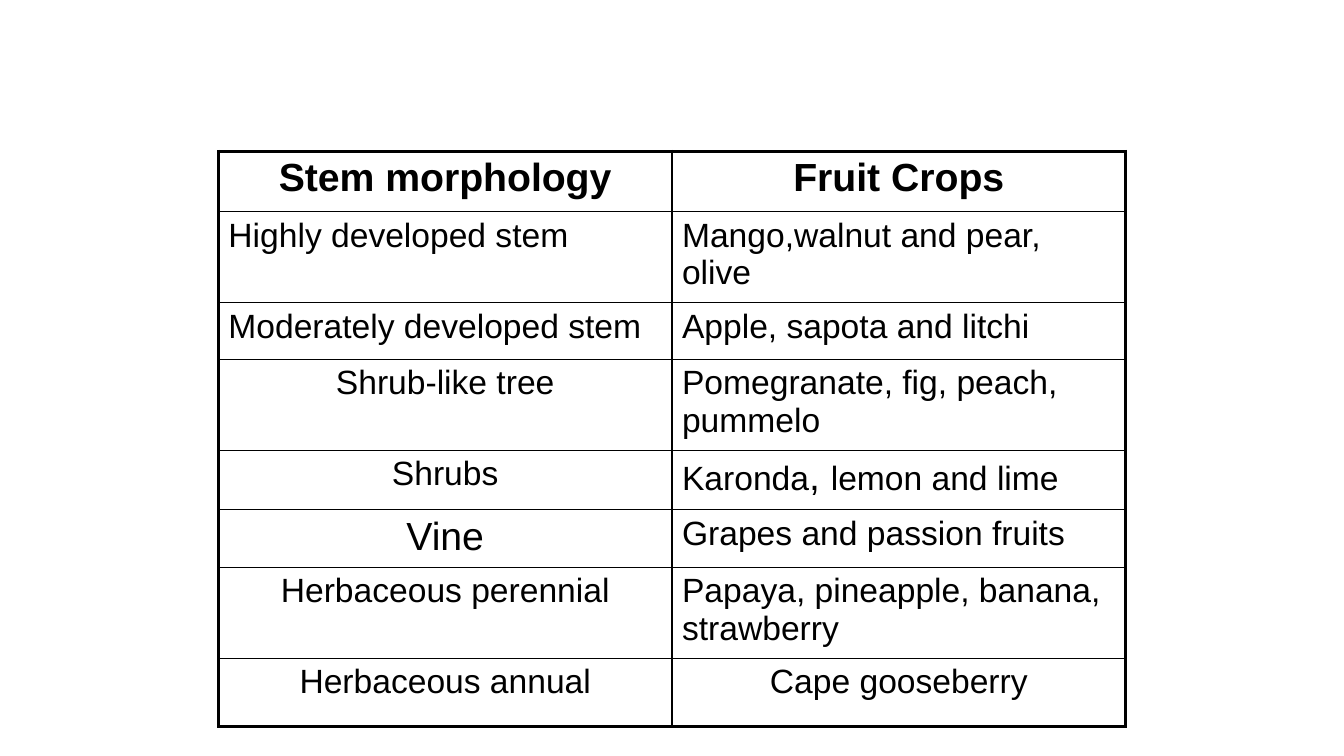
"""Build a slide with a table of stem morphology and fruit crops."""
from lxml import etree
from pptx import Presentation
from pptx.dml.color import RGBColor
from pptx.enum.text import PP_ALIGN
from pptx.oxml.ns import qn
from pptx.util import Pt

LEFT, MID = PP_ALIGN.LEFT, PP_ALIGN.CENTER
BLACK = RGBColor(0, 0, 0)
BODY, BIG = 24, 28
THIN, THICK = 1, 2.25

HEAD = ("Stem morphology", "Fruit Crops")
CROPS = [
    ("Highly developed stem", "Mango,walnut and pear, olive"),
    ("Moderately developed stem", "Apple, sapota and litchi"),
    ("Shrub-like tree", "Pomegranate, fig, peach, pummelo"),
    ("Shrubs", ("Karonda", ", ", "lemon and lime")),
    ("Vine", "Grapes and passion fruits"),
    ("Herbaceous perennial", "Papaya, pineapple, banana, strawberry"),
    ("Herbaceous annual", "Cape gooseberry"),
]
ROWS = [HEAD] + CROPS
LARGE = HEAD + (", ", "Vine")
FLUSH = {(1, 0), (2, 0)} | {(row, 1) for row in range(1, 7)}
HIGH = [43.2, 65, 40.5, 65, 42.5, 41.2, 65, 48.5]
X, Y, WIDE = 156, 108, 324


def edge(cell, side, width):
    """Draw one border of a cell."""
    line = etree.SubElement(cell._tc.get_or_add_tcPr(), qn("a:ln" + side), w=str(int(Pt(width))))
    fill = etree.SubElement(line, qn("a:solidFill"))
    etree.SubElement(fill, qn("a:srgbClr"), val=str(BLACK))


def write(cell, text, align, bold):
    """Fill a cell with its runs of text."""
    para = cell.text_frame.paragraphs[0]
    para.alignment = align
    space = etree.SubElement(para._p.get_or_add_pPr(), qn("a:spcBef"))
    etree.SubElement(space, qn("a:spcPct"), val="20000")
    for part in (text,) if isinstance(text, str) else text:
        run = para.add_run()
        run.text = part
        style = {"name": "Arial", "size": Pt(BIG if part in LARGE else BODY), "bold": bold}
        for key, value in style.items():
            setattr(run.font, key, value)
        run.font.color.rgb = BLACK


def main():
    """Make the slide and save it."""
    deck = Presentation()
    deck.slide_width, deck.slide_height = Pt(960), Pt(540)
    slide = deck.slides.add_slide(deck.slide_layouts[6])
    frame = slide.shapes.add_table(len(ROWS), 2, Pt(X), Pt(Y), Pt(2 * WIDE), Pt(sum(HIGH)))
    table = frame.table
    table.first_row = table.horz_banding = False
    for col in table.columns:
        col.width = Pt(WIDE)
    last = len(ROWS) - 1
    for row, texts in enumerate(ROWS):
        table.rows[row].height = Pt(HIGH[row])
        for col, text in enumerate(texts):
            cell = table.cell(row, col)
            outer = {"L": col == 0, "R": col == 1, "T": row == 0, "B": row == last}
            for side, thick in outer.items():
                edge(cell, side, THICK if thick else THIN)
            cell.fill.background()
            write(cell, text, LEFT if (row, col) in FLUSH else MID, row == 0)
    deck.save("out.pptx")


if __name__ == "__main__":
    main()
